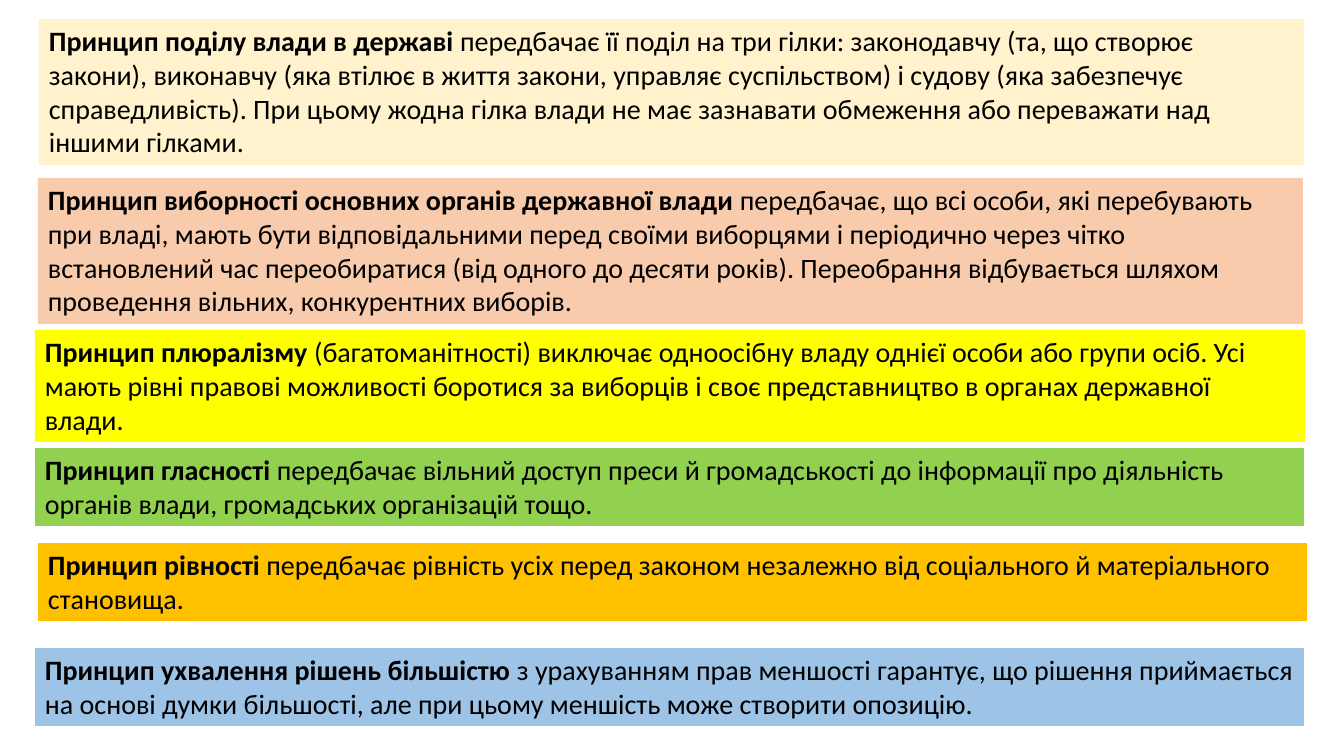
from dataclasses import dataclass

from pptx import Presentation
from pptx.dml.color import RGBColor
from pptx.enum.text import MSO_AUTO_SIZE
from pptx.util import Emu, Pt

PRINCIPLES = [
    ("Принцип поділу влади в державі ",
     "передбачає її поділ на три гілки: законодавчу (та, що створює закони), "
     "виконавчу (яка втілює в життя закони, управляє суспільством) і судову "
     "(яка забезпечує справедливість). При цьому жодна гілка влади не має "
     "зазнавати обмеження або переважати над іншими гілками.",
     "FFF2CC", 39, 19, 1265, 4),
    ("Принцип виборності основних органів державної влади ",
     "передбачає, що всі особи, які перебувають при владі, мають бути "
     "відповідальними перед своїми виборцями і періодично через чітко "
     "встановлений час переобиратися (від одного до десяти років). "
     "Переобрання відбувається шляхом проведення вільних, конкурентних виборів.",
     "F8CBAD", 38, 178, 1265, 4),
    ("Принцип плюралізму ",
     "(багатоманітності) виключає одноосібну владу однієї особи або групи осіб. "
     "Усі мають рівні правові можливості боротися за виборців і своє "
     "представництво в органах державної влади.",
     "FFFF00", 35, 330, 1270, 3),
    ("Принцип гласності ",
     "передбачає вільний доступ преси й громадськості до інформації про "
     "діяльність органів влади, громадських організацій тощо.",
     "92D050", 35, 448, 1269, 2),
    ("Принцип рівності ",
     "передбачає рівність усіх перед законом незалежно від соціального й "
     "матеріального становища.",
     "FFC000", 38, 543, 1269, 2),
    ("Принцип ухвалення рішень більшістю ",
     "з урахуванням прав меншості гарантує, що рішення приймається на основі "
     "думки більшості, але при цьому меншість може створити опозицію.",
     "9DC3E6", 35, 648, 1269, 2),
]


@dataclass(frozen=True)
class Theme:
    font: str = "Calibri"
    size: int = 20
    text: str = "000000"


THEME = Theme()
SLIDE_W, SLIDE_H = 1344, 756
LINE_H, PADDING = 34, 10


def px(n):
    return Emu(round(n * 914400 / 100.8))


def add_principle(s, name, body, fill, left, top, width, lines):
    height = PADDING + LINE_H * lines
    box = s.shapes.add_textbox(px(left), px(top), px(width), px(height))
    box.fill.solid()
    box.fill.fore_color.rgb = RGBColor.from_string(fill)
    tf = box.text_frame
    tf.word_wrap = True
    tf.auto_size = MSO_AUTO_SIZE.SHAPE_TO_FIT_TEXT
    p = tf.paragraphs[0]
    for text, bold in ((name, True), (body, False)):
        r = p.add_run()
        r.text = text
        r.font.name = THEME.font
        r.font.size = Pt(THEME.size)
        r.font.bold = bold
        r.font.color.rgb = RGBColor.from_string(THEME.text)


def main():
    prs = Presentation()
    prs.slide_width, prs.slide_height = px(SLIDE_W), px(SLIDE_H)
    s = prs.slides.add_slide(prs.slide_layouts[6])
    for principle in PRINCIPLES:
        add_principle(s, *principle)
    prs.save("out.pptx")


if __name__ == "__main__":
    main()
